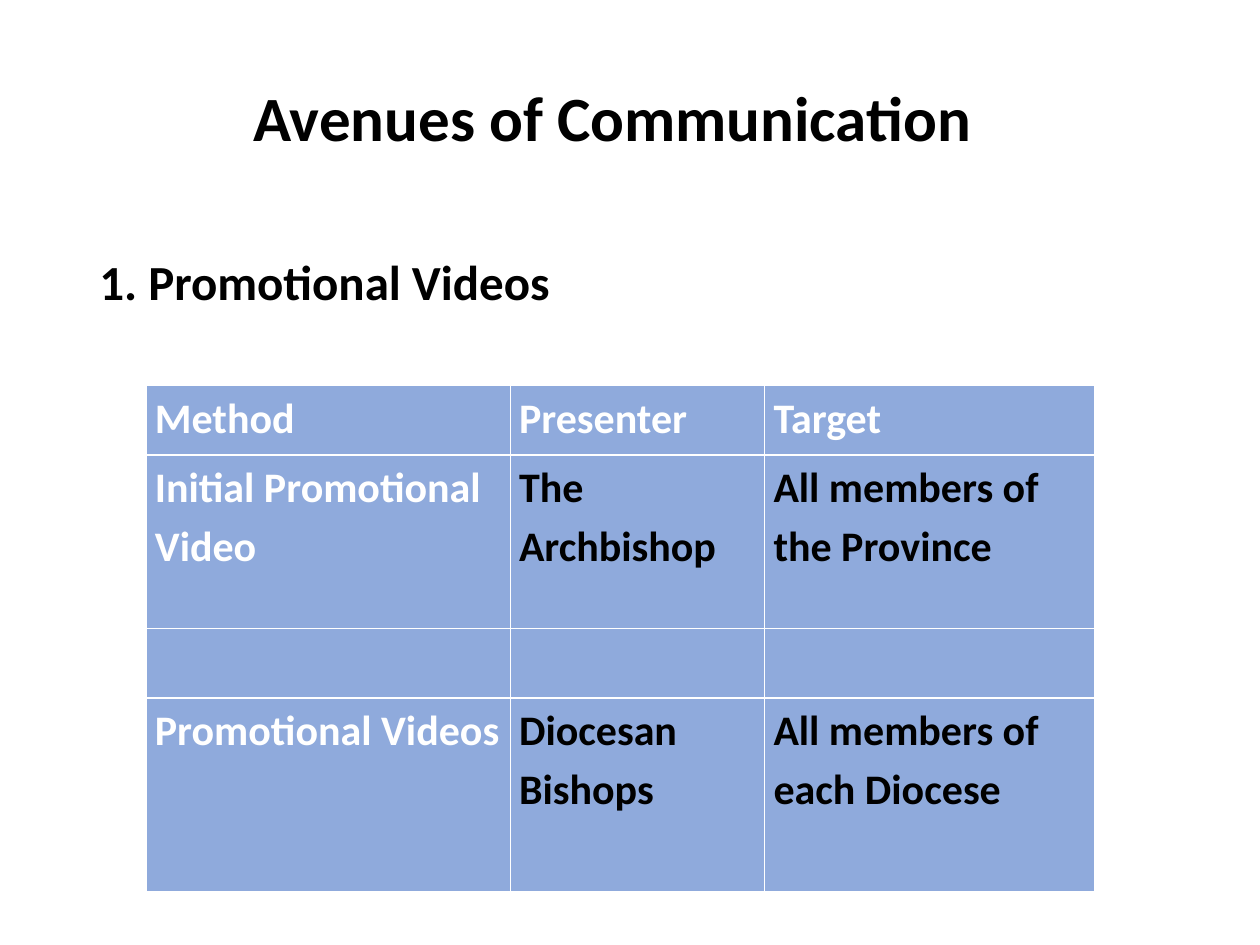
from pptx import Presentation
from pptx.dml.color import RGBColor
from pptx.enum.text import MSO_ANCHOR, PP_ALIGN
from pptx.util import Inches, Pt

BLACK = RGBColor(0x00, 0x00, 0x00)
WHITE = RGBColor(0xFF, 0xFF, 0xFF)
PERIWINKLE = RGBColor(0x8F, 0xAA, 0xDC)

COLUMN_WIDTHS = (2.89, 2.02, 2.62)
ROW_HEIGHTS = (0.55, 1.38, 0.55, 1.54)
AVENUES = (
    ("Method", "Presenter", "Target"),
    ("Initial Promotional Video", "The Archbishop", "All members of the Province"),
    ("", "", ""),
    ("Promotional Videos", "Diocesan Bishops", "All members of each Diocese"),
)
CELL_FORMAT = {
    "margin_left": Inches(0.07),
    "margin_right": Inches(0.07),
    "margin_top": 0,
    "margin_bottom": 0,
}


def apply_format(target, values):
    """Set each attribute named in values on the target."""
    for name, value in values.items():
        setattr(target, name, value)


def write_text(frame, text, size, color, paragraph_format):
    """Write one bold paragraph into a text frame."""
    paragraph = frame.paragraphs[0]
    apply_format(paragraph, paragraph_format)
    run = paragraph.add_run()
    run.text = text
    apply_format(run.font, {"name": "Calibri", "size": Pt(size), "bold": True})
    run.font.color.rgb = color


def add_heading(slide, box, text, size, anchor, paragraph_format):
    """Place a heading that wraps within the given box."""
    frame = slide.shapes.add_textbox(*box).text_frame
    apply_format(frame, {"word_wrap": True, "vertical_anchor": anchor})
    write_text(frame, text, size, BLACK, {"line_spacing": 0.9, **paragraph_format})


def add_avenues_table(slide, box):
    """Place the table of methods, presenters and targets in the given box."""
    table = slide.shapes.add_table(len(AVENUES), len(COLUMN_WIDTHS), *box).table
    apply_format(table, {"first_row": True, "first_col": True, "horz_banding": False})
    for column, width in zip(table.columns, COLUMN_WIDTHS):
        column.width = Inches(width)
    for row_index, (row, height) in enumerate(zip(table.rows, ROW_HEIGHTS)):
        row.height = Inches(height)
        for column_index, cell in enumerate(row.cells):
            cell.fill.solid()
            cell.fill.fore_color.rgb = PERIWINKLE
            apply_format(cell, CELL_FORMAT)
            text = AVENUES[row_index][column_index]
            if text:
                color = BLACK if row_index and column_index else WHITE
                write_text(cell.text_frame, text, 24, color, {"line_spacing": 1.15})


def main():
    """Build the slide and save it."""
    deck = Presentation()
    apply_format(deck, {"slide_width": Inches(10), "slide_height": Inches(7.5)})
    slide = deck.slides.add_slide(deck.slide_layouts[6])
    title_box = (Inches(0.55), Inches(0.41), Inches(8.62), Inches(1.1))
    topic_box = (Inches(0.69), Inches(2), Inches(8.62), Inches(4.76))
    table_box = (Inches(1.16), Inches(3.06), Inches(7.53), Inches(4.03))
    add_heading(slide, title_box, "Avenues of Communication", 36,
                MSO_ANCHOR.MIDDLE, {"alignment": PP_ALIGN.CENTER})
    add_heading(slide, topic_box, "1. Promotional Videos", 28,
                MSO_ANCHOR.TOP, {"space_before": Pt(10)})
    add_avenues_table(slide, table_box)
    deck.save("out.pptx")


if __name__ == "__main__":
    main()
